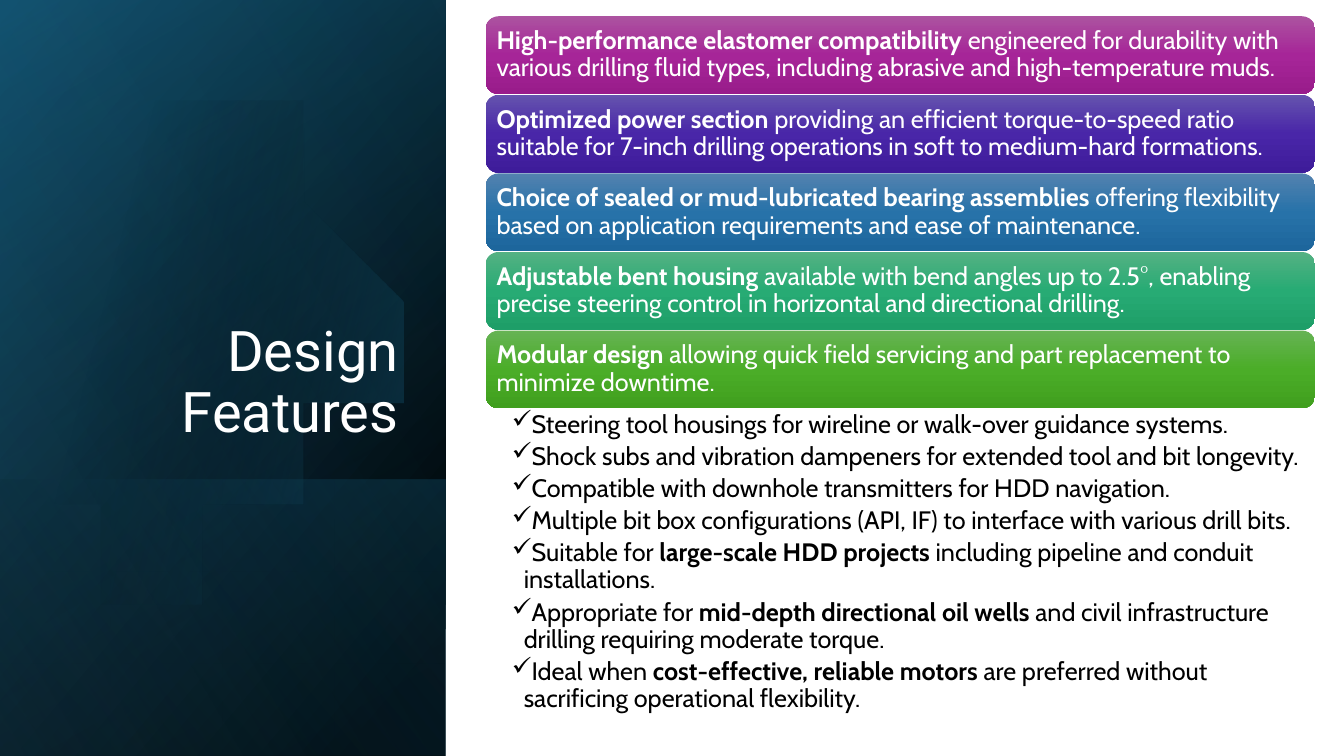
from lxml import etree
from pptx import Presentation, util as u
from pptx.dml.color import RGBColor
from pptx.enum import shapes, text
from pptx.oxml import parse_xml
from pptx.oxml.ns import nsdecls, qn

Cm = u.Cm

CARDS = [
    (("AC53A0", "A62598", "991C8B"), "High-performance elastomer compatibility",
     " engineered for durability with various drilling fluid types, including abrasive and high-temperature muds."),
    (("6553AE", "4926A8", "3E1C9A"), "Optimized power section",
     " providing an efficient torque-to-speed ratio suitable for 7-inch drilling operations in soft to medium-hard formations."),
    (("5382AF", "2772A9", "1D669C"), "Choice of sealed or mud-lubricated bearing assemblies",
     " offering flexibility based on application requirements and ease of maintenance."),
    (("54B183", "27AB74", "1E9E68"), "Adjustable bent housing",
     " available with bend angles up to 2.5°, enabling precise steering control in horizontal and directional drilling."),
    (("66B354", "4BAD28", "409F1E"), "Modular design",
     " allowing quick field servicing and part replacement to minimize downtime."),
]

POINTS = [
    ("Steering tool housings for wireline or walk-over guidance systems.",),
    ("Shock subs and vibration dampeners for extended tool and bit longevity.",),
    ("Compatible with downhole transmitters for HDD navigation.",),
    ("Multiple bit box configurations (API, IF) to interface with various drill bits.",),
    ("Suitable for ", "large-scale HDD projects",
     " including pipeline and conduit installations."),
    ("Appropriate for ", "mid-depth directional oil wells",
     " and civil infrastructure drilling requiring moderate torque."),
    ("Ideal when ", "cost-effective, reliable motors",
     " are preferred without sacrificing operational flexibility."),
]

START = (1.49, 1.1)
CURVES = [
    ((2.46, 1.12), (3.35, 1.77), (3.63, 2.75)),
    ((3.98, 3.97), (3.28, 5.23), (2.07, 5.58)),
    ((1.31, 5.8), (0.53, 5.61), (-0.03, 5.14)),
    ((-0.15, 5.03), (-0.15, 1.75), (0, 1.61)),
    ((0.23, 1.42), (0.5, 1.28), (0.8, 1.19)),
    ((1.03, 1.13), (1.26, 1.1), START),
]


def color(code):
    return RGBColor.from_string(code)


def shade(shape, stops, angle):
    shape.shadow.inherit = False
    shape.line.fill.background()
    shape.fill.background()
    marks = "".join(
        f'<a:gs pos="{pos * 1000}"><a:srgbClr val="{code}">'
        f'<a:alpha val="{alpha * 1000}"/></a:srgbClr></a:gs>'
        for pos, code, alpha in stops)
    grad = parse_xml(
        f'<a:gradFill {nsdecls("a")} rotWithShape="1"><a:gsLst>{marks}</a:gsLst>'
        f'<a:lin ang="{angle * 60000}" scaled="0"/></a:gradFill>')
    props = shape.element.spPr
    props.replace(props.find(qn("a:noFill")), grad)


def turned(slide, box, stops, angle):
    x, y, w, h = box
    shape = slide.shapes.add_shape(
        shapes.MSO_SHAPE.RECTANGLE, Cm(x + (w - h) / 2), Cm(y + (h - w) / 2), Cm(h), Cm(w))
    shape.rotation = 90
    shape.element.spPr.xfrm.set("flipH", "1")
    shade(shape, stops, angle)


def disc(slide, x, y):
    dots, last = [], START
    for a, b, end in CURVES:
        for i in range(1, 17):
            t = i / 16
            s = 1 - t
            dots.append(tuple(
                s ** 3 * p + 3 * s * s * t * q + 3 * s * t * t * r + t ** 3 * e
                for p, q, r, e in zip(last, a, b, end)))
        last = end
    dots = [(max(0, px), py) for px, py in dots]
    form = slide.shapes.build_freeform(*START, scale=float(u.Inches(1)))
    form.add_line_segments(dots, close=True)
    shade(form.convert_to_shape(Cm(x), Cm(y)), [(29, "000000", 0), (100, "156082", 43)], 14)


def fill_runs(para, parts, bold, code):
    para.line_spacing = 0.9
    for i, part in enumerate(parts):
        run = para.add_run()
        run.text = part
        run.font.size = u.Pt(18)
        run.font.name = "Cabin"
        run.font.bold = i == bold
        run.font.color.rgb = color(code)


def panel(slide, x, y, w, h):
    full = (x, y, w, h)
    low = 6.96
    turned(slide, full, [(8, "000000", 100), (100, "104862", 100)], 50)
    turned(slide, full, [(0, "000000", 0), (99, "156082", 46)], 30)
    turned(slide, (x, y + h - low, w, low), [(2, "156082", 29), (100, "000000", 30)], 130)
    disc(slide, x, y)
    turned(slide, full, [(0, "000000", 0), (99, "46B1E1", 11)], 120)

    title = slide.shapes.add_textbox(Cm(x + 1.63), Cm(y + 4.67), Cm(8.66), Cm(6.65))
    frame = title.text_frame
    frame.word_wrap = True
    frame.vertical_anchor = text.MSO_ANCHOR.BOTTOM
    frame.text = "Design Features"
    para = frame.paragraphs[0]
    para.alignment = text.PP_ALIGN.RIGHT
    para.line_spacing = 0.9
    font = para.runs[0].font
    font.size = u.Pt(40)
    font.name = "Roboto"
    font.color.rgb = color("FFFFFF")


def cards(slide, x, y, w, h):
    gap = 0.02
    tall = (h - gap * (len(CARDS) - 1)) / len(CARDS)
    for i, (tones, lead, rest) in enumerate(CARDS):
        card = slide.shapes.add_shape(
            shapes.MSO_SHAPE.ROUNDED_RECTANGLE,
            Cm(x), Cm(y + i * (tall + gap)), Cm(w), Cm(tall))
        shade(card, [(pos, tone, 100) for pos, tone in zip((0, 50, 100), tones)], 90)
        frame = card.text_frame
        frame.word_wrap = True
        frame.vertical_anchor = text.MSO_ANCHOR.MIDDLE
        frame.margin_left = frame.margin_right = Cm(0.18)
        frame.margin_top = frame.margin_bottom = Cm(0.18)
        para = frame.paragraphs[0]
        para.alignment = text.PP_ALIGN.LEFT
        fill_runs(para, (lead, rest), 0, "FFFFFF")


def points(slide, x, y, w, h):
    frame = slide.shapes.add_textbox(Cm(x), Cm(y), Cm(w), Cm(h)).text_frame
    frame.word_wrap = True
    frame.margin_left, frame.margin_right = Cm(0.66), Cm(0.36)
    frame.margin_top = frame.margin_bottom = Cm(0.08)
    for i, parts in enumerate(POINTS):
        para = frame.add_paragraph() if i else frame.paragraphs[0]
        fill_runs(para, parts, 1, "000000")
        para.space_after = u.Pt(3.5)
        props = para._p.get_or_add_pPr()
        props.set("marL", str(Cm(0.3)))
        props.set("indent", str(-Cm(0.3)))
        etree.SubElement(props, qn("a:buChar")).set("char", "✓")


def main():
    deck = Presentation()
    deck.slide_width, deck.slide_height = Cm(33.87), Cm(19.05)
    slide = deck.slides.add_slide(deck.slide_layouts[6])
    panel(slide, 0, 0, 11.23, 19.05)
    cards(slide, 12.24, 0.41, 20.9, 9.88)
    points(slide, 12.24, 10.29, 20.9, 8.43)
    deck.save("out.pptx")


if __name__ == "__main__":
    main()
